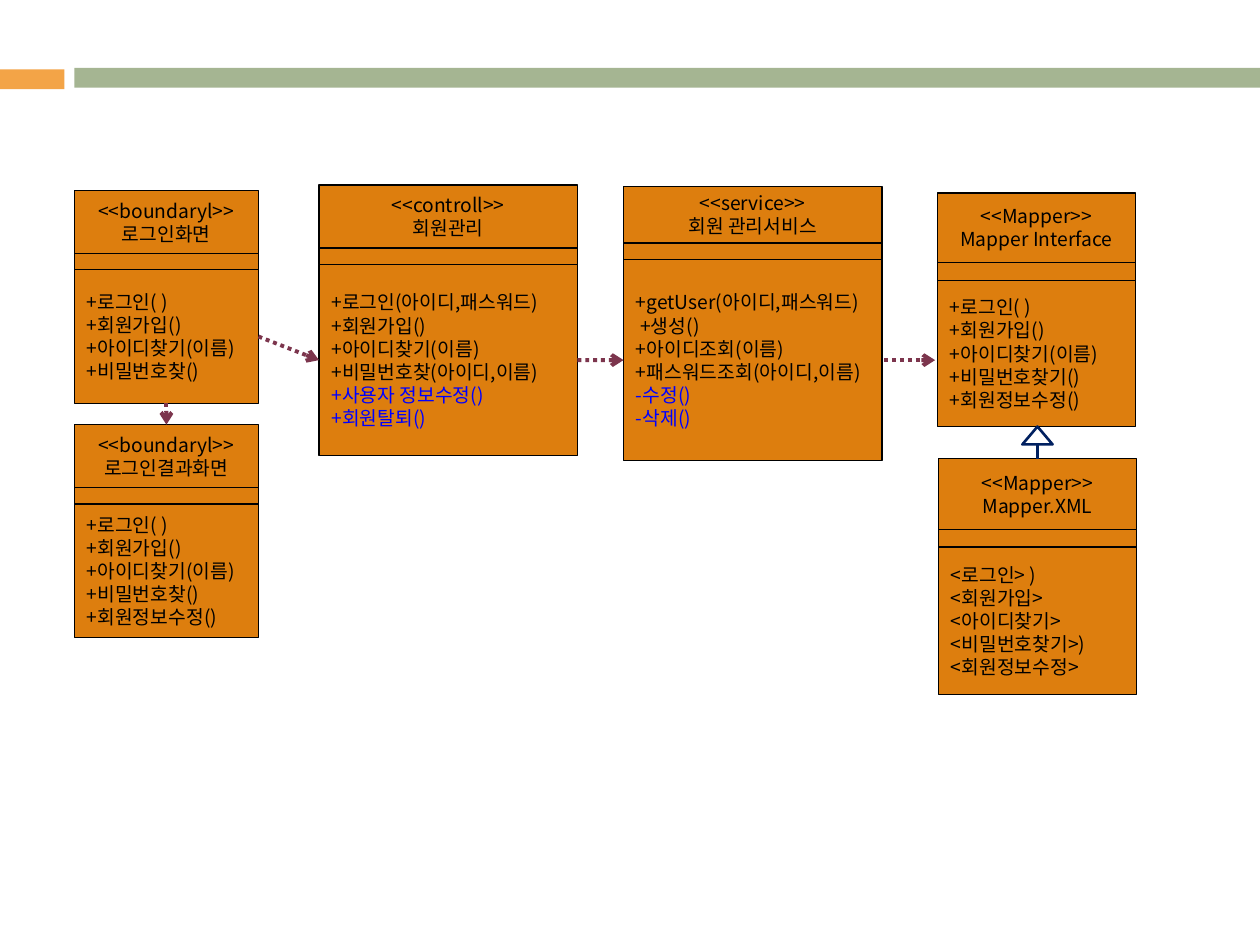
from lxml import etree
from pptx import Presentation
from pptx.dml.color import RGBColor
from pptx.enum.dml import MSO_LINE
from pptx.enum.shapes import MSO_CONNECTOR, MSO_SHAPE
from pptx.enum.text import MSO_ANCHOR, PP_ALIGN
from pptx.oxml.ns import qn
from pptx.util import Cm, Pt

RECTANGLE = MSO_SHAPE.RECTANGLE
TRIANGLE = MSO_SHAPE.ISOSCELES_TRIANGLE
STRAIGHT = MSO_CONNECTOR.STRAIGHT
DOTTED = MSO_LINE.ROUND_DOT
MIDDLE = MSO_ANCHOR.MIDDLE
LEFT, CENTER = PP_ALIGN.LEFT, PP_ALIGN.CENTER
TOP_SIDE, LEFT_SIDE, BOTTOM_SIDE, RIGHT_SIDE = range(4)

FONT = "Noto Sans CJK KR"
ORANGE, BLACK, BLUE = "DD7E0E", "000000", "0000FF"
PLUM, NAVY = "7C354D", "002060"

CLASSES = {
    "service": ((12.57, 3.76, 5.21), (1.14, 0.33, 4.06),
                ["<<service>>", "회원 관리서비스"],
                ["+getUser(아이디,패스워드)", " +생성()", "+아이디조회(이름)",
                 "+패스워드조회(아이디,이름)"], ["-수정()", "-삭제()"]),
    "control": ((6.43, 3.73, 5.21), (1.27, 0.33, 3.86),
                ["<<controll>>", "회원관리"],
                ["+로그인(아이디,패스워드)", "+회원가입()", "+아이디찾기(이름)",
                 "+비밀번호찾(아이디,이름)"], ["+사용자 정보수정()", "+회원탈퇴()"]),
    "login": ((1.5, 3.84, 3.71), (1.27, 0.33, 2.69),
              ["<<boundaryl>>", "로그인화면"],
              ["+로그인( )", "+회원가입()", "+아이디찾기(이름)", "+비밀번호찾()"], []),
    "result": ((1.5, 8.56, 3.71), (1.27, 0.33, 2.69),
               ["<<boundaryl>>", "로그인결과화면"],
               ["+로그인( )", "+회원가입()", "+아이디찾기(이름)", "+비밀번호찾()",
                "+회원정보수정()"], []),
    "interface": ((18.9, 3.89, 3.99), (1.4, 0.36, 2.95),
                  ["<<Mapper>>", "Mapper Interface"],
                  ["+로그인( )", "+회원가입()", "+아이디찾기(이름)", "+비밀번호찾기()",
                   "+회원정보수정()"], []),
    "xml": ((18.92, 9.25, 3.99), (1.42, 0.36, 2.97),
            ["<<Mapper>>", "Mapper.XML"],
            ["<로그인> )", "<회원가입>", "<아이디찾기>", "<비밀번호찾기>)",
             "<회원정보수정>"], []),
}


def color(value):
    """Turn a hex string into a colour."""
    return RGBColor.from_string(value)


def add_box(shapes, kind, left, top, width, height, fill=None, line=None, weight=0.75):
    """Add a preset shape with the given fill and outline."""
    shape = shapes.add_shape(kind, Cm(left), Cm(top), Cm(width), Cm(height))
    shape.shadow.inherit = False
    if fill:
        shape.fill.solid()
        shape.fill.fore_color.rgb = color(fill)
    else:
        shape.fill.background()
    if line:
        shape.line.color.rgb = color(line)
        shape.line.width = Pt(weight)
    else:
        shape.line.fill.background()
    return shape


def add_text(paragraph, text, size=11, fill=BLACK, align=LEFT):
    """Write one formatted line of text into a paragraph."""
    paragraph.alignment = align
    run = paragraph.add_run()
    run.text = text
    run.font.size = Pt(size)
    run.font.name = FONT
    run.font.color.rgb = color(fill)
    east_asian = etree.SubElement(run._r.get_or_add_rPr(), qn("a:ea"))
    east_asian.set("typeface", FONT)


def fill_text(shape, lines):
    """Fill a compartment with pairs of text and format."""
    frame = shape.text_frame
    frame.word_wrap = False
    frame.vertical_anchor = MIDDLE
    for index, (text, style) in enumerate(lines):
        paragraph = frame.add_paragraph() if index else frame.paragraphs[0]
        add_text(paragraph, text, **style)


def add_class(slide, box, heights, names, operations, new_operations):
    """Add a three-part class box and return its name and operation parts."""
    left, top, width = box
    group = slide.shapes.add_group_shape()
    parts = []
    for height in heights:
        parts.append(add_box(group.shapes, RECTANGLE, left, top, width, height,
                             fill=ORANGE, line=BLACK))
        top += height
    header, _, body = parts
    fill_text(header, [(name, {"align": CENTER}) for name in names])
    fill_text(body, [(text, {}) for text in operations]
              + [(text, {"fill": BLUE}) for text in new_operations])
    return header, body


def add_line(slide, start, end, line=PLUM, arrow=True):
    """Add a connector between points or (shape, side) pairs."""
    connector = slide.shapes.add_connector(STRAIGHT, 0, 0, 0, 0)
    if isinstance(start[0], (int, float)):
        connector.begin_x, connector.begin_y = map(Cm, start)
    else:
        connector.begin_connect(*start)
    if isinstance(end[0], (int, float)):
        connector.end_x, connector.end_y = map(Cm, end)
    else:
        connector.end_connect(*end)
    connector.line.color.rgb = color(line)
    connector.line.width = Pt(2.25)
    if arrow:
        connector.line.dash_style = DOTTED
        tail = etree.SubElement(connector.line._get_or_add_ln(), qn("a:tailEnd"))
        tail.set("type", "arrow")
    etree.SubElement(connector._element.spPr, qn("a:effectLst"))


def add_header_bars(slide):
    """Add the two coloured bars across the top."""
    add_box(slide.shapes, RECTANGLE, 1.5, 1.37, 23.9, 0.4, fill="A5B592")
    add_box(slide.shapes, RECTANGLE, 0, 1.4, 1.3, 0.4, fill="F3A447")


def add_inheritance(slide, left, top, child):
    """Add the hollow triangle and its stem down to the child class."""
    width, height = 0.61, 0.36
    add_box(slide.shapes, TRIANGLE, left, top, width, height, line=NAVY, weight=1.5)
    add_line(slide, (left + width / 2, top + height), (child, TOP_SIDE),
             line=NAVY, arrow=False)


def main():
    """Build the class diagram slide."""
    presentation = Presentation()
    presentation.slide_width, presentation.slide_height = Cm(25.4), Cm(19.05)
    slide = presentation.slides.add_slide(presentation.slide_layouts[6])
    add_header_bars(slide)
    parts = {key: add_class(slide, *values) for key, values in CLASSES.items()}
    headers = {key: header for key, (header, _) in parts.items()}
    bodies = {key: body for key, (_, body) in parts.items()}
    for source, target in (("login", "control"), ("control", "service")):
        add_line(slide, (bodies[source], RIGHT_SIDE), (bodies[target], LEFT_SIDE))
    add_line(slide, (17.83, 7.26), (18.85, 7.26))
    add_line(slide, (bodies["login"], BOTTOM_SIDE), (headers["result"], TOP_SIDE))
    add_inheritance(slide, 20.61, 8.6, headers["xml"])
    presentation.save("out.pptx")


if __name__ == "__main__":
    main()
